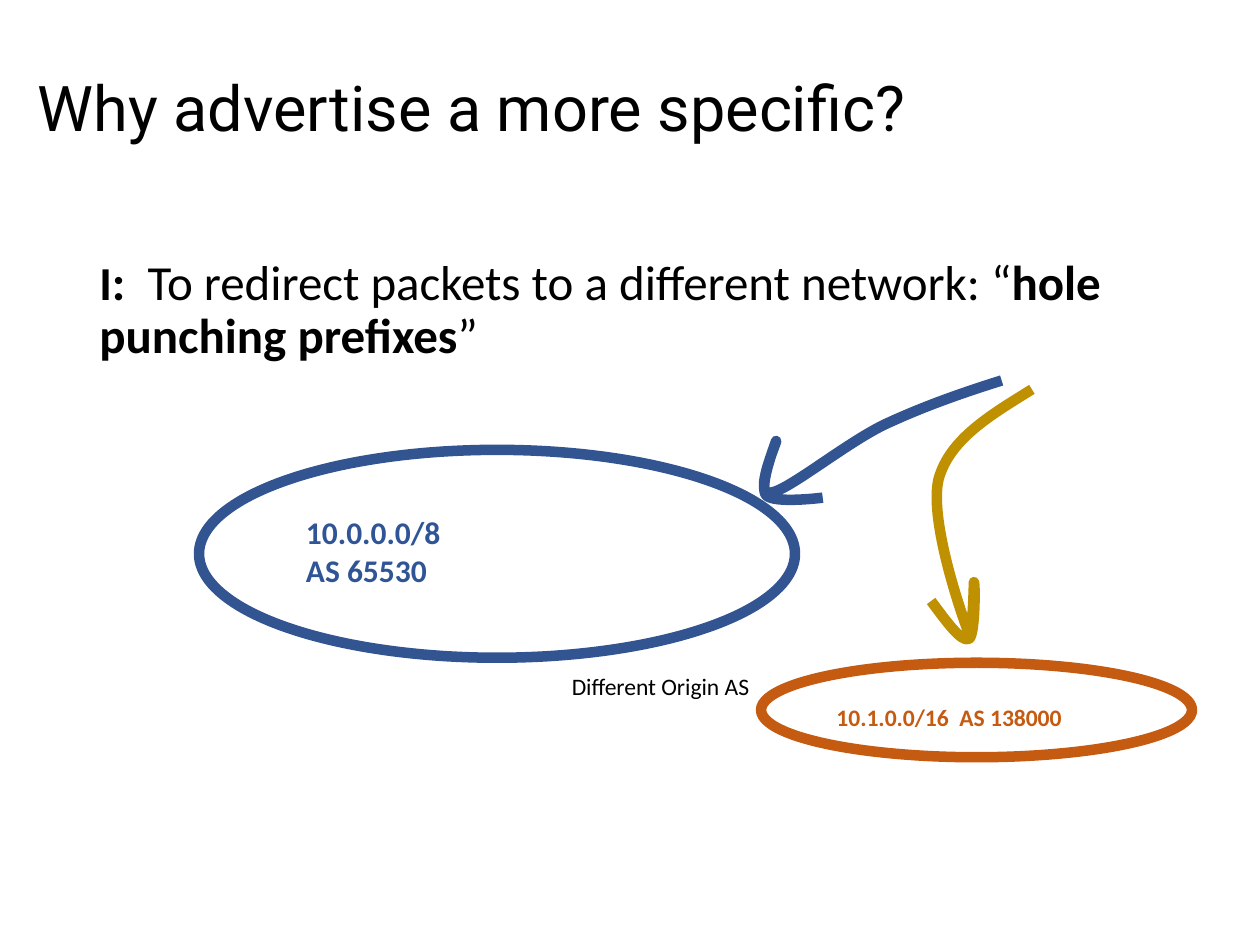
from lxml.etree import SubElement
from pptx import Presentation
from pptx.dml.color import RGBColor
from pptx.enum.shapes import MSO_SHAPE
from pptx.enum.text import MSO_ANCHOR, MSO_AUTO_SIZE
from pptx.oxml.ns import qn
from pptx.util import Inches, Pt

BLACK = "000000"
BLUE = "325491"
BLUE_TEXT = "2F5597"
ORANGE = "C55A11"
GOLD = "BF9000"


def color(value):
    return RGBColor.from_string(value)


def add_text(slide, box, paragraphs, size, fill=BLACK, font="Calibri", bold=False,
             wrap=False, anchor=MSO_ANCHOR.TOP, line_spacing=None, space_before=0):
    frame = slide.shapes.add_textbox(*map(Inches, box)).text_frame
    frame.word_wrap = wrap
    frame.auto_size = MSO_AUTO_SIZE.NONE if wrap else MSO_AUTO_SIZE.SHAPE_TO_FIT_TEXT
    frame.vertical_anchor = anchor
    for index, runs in enumerate(paragraphs):
        paragraph = frame.paragraphs[0] if index == 0 else frame.add_paragraph()
        paragraph.space_before = Pt(space_before)
        if line_spacing:
            paragraph.line_spacing = line_spacing
        for words, overrides in runs:
            run = paragraph.add_run()
            run.text = words
            run.font.name = font
            run.font.size = Pt(overrides.get("size", size))
            run.font.bold = overrides.get("bold", bold)
            run.font.color.rgb = color(fill)


def set_outline(shape, stroke):
    shape.shadow.inherit = False
    shape.line.color.rgb = color(stroke)
    shape.line.width = Pt(6)


def add_network(slide, box, stroke):
    network = slide.shapes.add_shape(MSO_SHAPE.OVAL, *map(Inches, box))
    network.fill.solid()
    network.fill.fore_color.rgb = color("FFFFFF")
    set_outline(network, stroke)


def add_hand_drawn_arrow(slide, box, start, curves, stroke):
    left, top, width, height = map(Inches, box)
    builder = slide.shapes.build_freeform(*map(Inches, start))
    builder.add_line_segments([tuple(map(Inches, curves[-1][-1]))], close=False)
    arrow = builder.convert_to_shape()
    arrow.left, arrow.top, arrow.width, arrow.height = left, top, width, height
    arrow.fill.background()
    set_outline(arrow, stroke)

    outline = next(arrow._element.iter(qn("a:path")))
    outline.set("w", str(width))
    outline.set("h", str(height))
    for segment in list(outline):
        outline.remove(segment)
    for tag, points in [("a:moveTo", [start])] + [("a:cubicBezTo", c) for c in curves]:
        segment = SubElement(outline, qn(tag))
        for x, y in points:
            SubElement(segment, qn("a:pt"), x=str(Inches(x) - left), y=str(Inches(y) - top))


def main():
    presentation = Presentation()
    presentation.slide_width = Inches(10)
    presentation.slide_height = Inches(7.5)
    slide = presentation.slides.add_slide(presentation.slide_layouts[6])

    add_text(slide, (0.2, 0.16, 12.21, 1.45), [[("Why advertise a more specific?", {})]],
             size=36, font="Roboto", wrap=True, anchor=MSO_ANCHOR.MIDDLE, line_spacing=0.9)
    reason = [
        ("I", {"size": 27, "bold": True}),
        (": ", {"bold": True}),
        (" To redirect packets to a different network: “", {}),
        ("hole punching prefixes", {"bold": True}),
        ("”", {}),
    ]
    add_text(slide, (0.69, 2, 8.62, 4.76), [reason], size=28, wrap=True,
             line_spacing=0.9, space_before=10)

    add_network(slide, (1.58, 3.57, 4.73, 1.65), BLUE)
    add_text(slide, (2.33, 4.02, 1.28, 0.71), [[("10.0.0.0/8", {})], [("AS 65530", {})]],
             size=18, fill=BLUE_TEXT, bold=True)
    add_network(slide, (6.04, 5.26, 3.42, 0.75), ORANGE)
    add_text(slide, (6.54, 5.53, 2.02, 0.33), [[("10.1.0.0/16  AS 138000", {})]],
             size=13.5, fill=ORANGE, bold=True)

    add_hand_drawn_arrow(slide, (6.06, 3.02, 1.88, 0.94), (7.95, 3.02), [
        ((7.63, 3.12), (7.32, 3.23), (7.02, 3.37)),
        ((6.71, 3.52), (6.26, 3.89), (6.12, 3.91)),
        ((5.97, 3.94), (6.17, 3.5), (6.16, 3.5)),
        ((6.16, 3.51), (6.02, 3.85), (6.08, 3.93)),
        ((6.14, 4), (6.53, 3.95), (6.53, 3.95)),
    ], BLUE)
    add_hand_drawn_arrow(slide, (7.39, 3.09, 0.8, 1.98), (8.19, 3.09), [
        ((7.87, 3.29), (7.54, 3.48), (7.45, 3.8)),
        ((7.37, 4.12), (7.63, 4.87), (7.68, 5)),
        ((7.72, 5.14), (7.73, 4.61), (7.73, 4.62)),
        ((7.74, 4.63), (7.74, 5.05), (7.69, 5.07)),
        ((7.63, 5.1), (7.51, 4.93), (7.39, 4.77)),
    ], GOLD)
    add_text(slide, (4.44, 5.28, 1.64, 0.33), [[("Different Origin AS", {})]], size=13.5)

    presentation.save("out.pptx")


if __name__ == "__main__":
    main()
